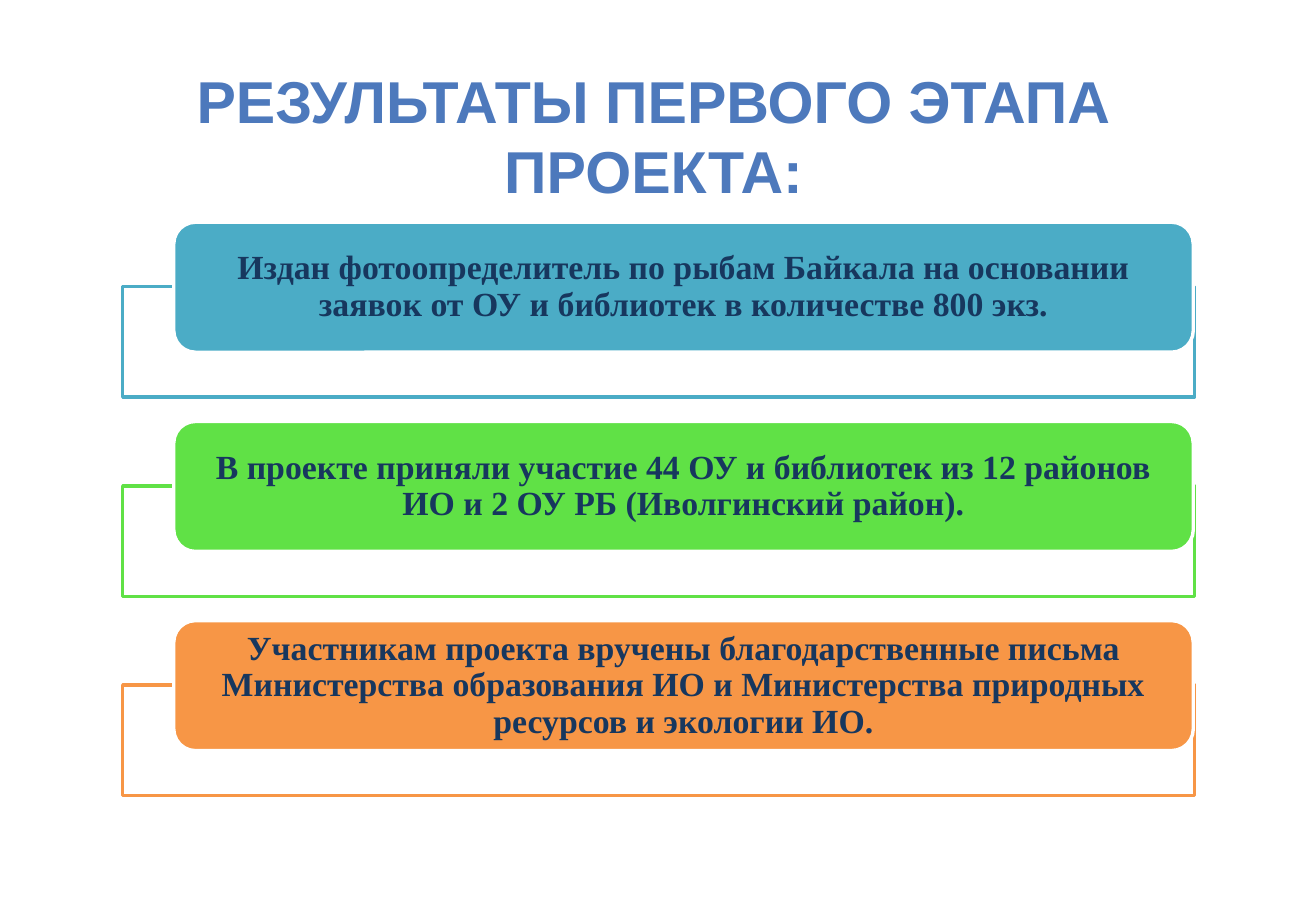
from dataclasses import dataclass

from pptx import Presentation
from pptx.dml.color import RGBColor
from pptx.enum.shapes import MSO_SHAPE
from pptx.enum.text import MSO_ANCHOR, PP_ALIGN
from pptx.util import Inches, Pt

RECTANGLE = MSO_SHAPE.RECTANGLE
ROUNDED = MSO_SHAPE.ROUNDED_RECTANGLE
MIDDLE = MSO_ANCHOR.MIDDLE
CENTER = PP_ALIGN.CENTER
TITLE_ONLY_LAYOUT = 5


@dataclass(frozen=True)
class Theme:
    white: str = "FFFFFF"
    title_color: str = "4D79BC"
    text_color: str = "17375E"
    teal: str = "4BACC6"
    green: str = "60E146"
    orange: str = "F79646"
    title_font: str = "Arial"
    text_font: str = "Times New Roman"
    title_size: int = 35
    text_size: int = 20
    line_width: int = 2


THEME = Theme()
TITLE = "РЕЗУЛЬТАТЫ ПЕРВОГО ЭТАПА ПРОЕКТА:"
RESULTS = [
    ("Издан фотоопределитель по рыбам Байкала на основании заявок от ОУ "
     "и библиотек в количестве 800 экз.", THEME.teal),
    ("В проекте приняли участие 44 ОУ и библиотек из 12 районов ИО "
     "и 2 ОУ РБ (Иволгинский район).", THEME.green),
    ("Участникам проекта вручены благодарственные письма Министерства "
     "образования ИО и Министерства природных ресурсов и экологии ИО.",
     THEME.orange),
]
FIRST_TOP = 1.83
PITCH = 1.64
FRAME_OFFSET = 0.53


class SlideBuilder:
    def __init__(self, slide, theme):
        self.slide = slide
        self.theme = theme

    def set_text(self, shape, text, font_name, size, color, side_margin, spacing):
        frame = shape.text_frame
        frame.text = text
        frame.word_wrap = True
        frame.vertical_anchor = MIDDLE
        frame.margin_left = frame.margin_right = Inches(side_margin)
        frame.margin_top = frame.margin_bottom = 0
        paragraph = frame.paragraphs[0]
        paragraph.alignment = CENTER
        paragraph.line_spacing = spacing
        font = paragraph.runs[0].font
        font.name = font_name
        font.size = Pt(size)
        font.bold = True
        font.color.rgb = RGBColor.from_string(color)

    def title(self, text):
        shape = self.slide.shapes.title
        shape.left, shape.top = Inches(1.48), Inches(0.44)
        shape.width, shape.height = Inches(7.8), Inches(1.34)
        self.set_text(shape, text, self.theme.title_font, self.theme.title_size,
                      self.theme.title_color, side_margin=0.1, spacing=1.0)

    def box(self, kind, left, top, width, height, fill, line):
        shape = self.slide.shapes.add_shape(
            kind, Inches(left), Inches(top), Inches(width), Inches(height))
        shape.shadow.inherit = False
        shape.fill.solid()
        shape.fill.fore_color.rgb = RGBColor.from_string(fill)
        shape.line.color.rgb = RGBColor.from_string(line)
        shape.line.width = Pt(self.theme.line_width)
        return shape

    def result(self, top, text, color):
        """Draw an outlined frame with a filled label over its upper edge."""
        white = self.theme.white
        self.box(RECTANGLE, 1.01, top + FRAME_OFFSET, 8.82, 0.91, white, color)
        label = self.box(ROUNDED, 1.43, top, 8.39, 1.07, color, white)
        self.set_text(label, text, self.theme.text_font, self.theme.text_size,
                      self.theme.text_color, side_margin=0.23, spacing=0.9)


def main():
    presentation = Presentation()
    presentation.slide_width = Inches(10.83)
    presentation.slide_height = Inches(7.5)
    layout = presentation.slide_layouts[TITLE_ONLY_LAYOUT]
    builder = SlideBuilder(presentation.slides.add_slide(layout), THEME)
    builder.title(TITLE)
    for index, (text, color) in enumerate(RESULTS):
        builder.result(FIRST_TOP + index * PITCH, text, color)
    presentation.save("out.pptx")


if __name__ == "__main__":
    main()
